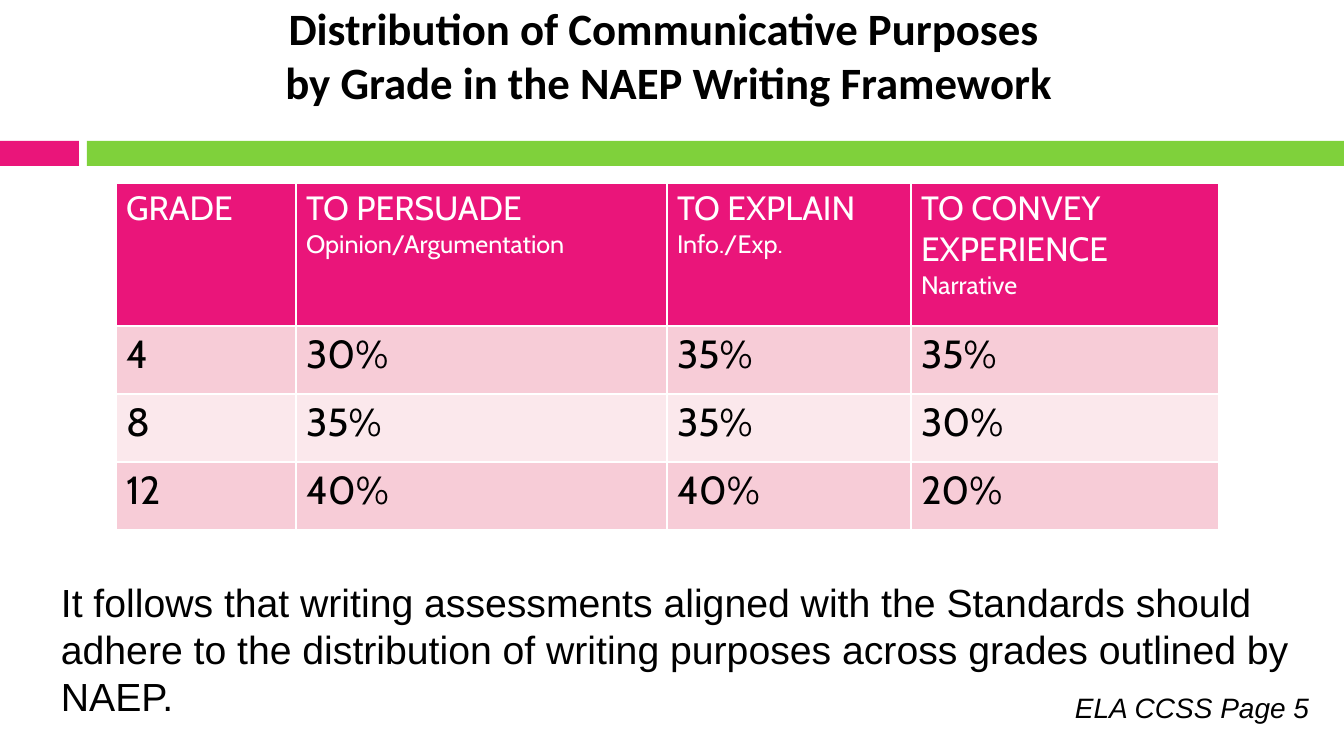
from lxml import etree
from pptx import Presentation, util as u
from pptx.dml.color import RGBColor
from pptx.enum import shapes, text

PINK = RGBColor(0xEA, 0x15, 0x7A)
GREEN = RGBColor(0x7F, 0xD1, 0x3B)
ROSE = RGBColor(0xF7, 0xCC, 0xD7)
PALE = RGBColor(0xFB, 0xE8, 0xEC)
WHITE = RGBColor(0xFF, 0xFF, 0xFF)
BLACK = RGBColor(0, 0, 0)

WIDE, HIGH = 1344, 756
BAR_TOP, BAR_HIGH, SPLIT, GAP = 141, 25, 79, 8

HEADS = [
    ["GRADE"],
    ["TO PERSUADE", "Opinion/Argumentation"],
    ["TO EXPLAIN", "Info./Exp."],
    ["TO CONVEY EXPERIENCE", "Narrative"],
]
GRADES = [
    ("4", "30%", "35%", "35%"),
    ("8", "35%", "35%", "30%"),
    ("12", "40%", "40%", "20%"),
]
COLS = [180, 371, 244, 308]
HEAD_HIGH, ROW_HIGH = 143, 68
TABLE_LEFT, TABLE_TOP = 116, 183

TITLE = ["Distribution of Communicative Purposes \vby Grade in the NAEP Writing Framework"]
BODY = ["It follows that writing assessments aligned with the Standards should adhere to "
        "the distribution of writing purposes across grades outlined by NAEP."]
CITE = ["ELA CCSS Page 5"]

LEFT, CENTER = text.PP_ALIGN.LEFT, text.PP_ALIGN.CENTER
TEXTS = [
    (TITLE, (16, -4, 1306, 120), CENTER, True, dict(name="Calibri", size=32, bold=True)),
    (BODY, (51, 573, 1271, 152), LEFT, True, dict(name="Arial", size=28)),
    (CITE, (1065, 686, 257, 44), LEFT, False, dict(name="Arial", size=20, italic=True)),
]


def px(n):
    return u.Inches(n / 100.8)


def style(font, form, color):
    for key, val in form.items():
        setattr(font, key, u.Pt(val) if key == "size" else val)
    font.color.rgb = color


def write(frame, lines, forms, color, align=LEFT):
    for i, (line, form) in enumerate(zip(lines, forms)):
        para = frame.paragraphs[0] if i == 0 else frame.add_paragraph()
        para.text = line
        para.alignment = align
        for run in para.runs:
            style(run.font, form, color)


def edge(cell):
    prop = cell._tc.get_or_add_tcPr()
    ns = "http://schemas.openxmlformats.org/drawingml/2006/main"
    for i, side in enumerate(("lnL", "lnR", "lnT", "lnB")):
        line = etree.Element(f"{{{ns}}}{side}", w=str(u.Pt(1)))
        fill = etree.SubElement(line, f"{{{ns}}}solidFill")
        etree.SubElement(fill, f"{{{ns}}}srgbClr", val=str(WHITE))
        prop.insert(i, line)


def add_bar(slide, left, wide, color):
    bar = slide.shapes.add_shape(shapes.MSO_SHAPE.RECTANGLE,
                                 *map(px, (left, BAR_TOP, wide, BAR_HIGH)))
    bar.shadow.inherit = False
    bar.fill.solid()
    bar.fill.fore_color.rgb = color
    bar.line.fill.background()


def add_grid(slide):
    rows = [HEADS] + [[[val] for val in row] for row in GRADES]
    high = HEAD_HIGH + ROW_HIGH * len(GRADES)
    grid = slide.shapes.add_table(len(rows), len(COLS), px(TABLE_LEFT), px(TABLE_TOP),
                                  px(sum(COLS)), px(high)).table
    for col, wide in zip(grid.columns, COLS):
        col.width = px(wide)
    for r, row in enumerate(rows):
        head = r == 0
        grid.rows[r].height = px(HEAD_HIGH if head else ROW_HIGH)
        sizes = (24, 18) if head else (28,)
        forms = [dict(name="Cabin", size=size, bold=False) for size in sizes]
        for c, lines in enumerate(row):
            cell = grid.cell(r, c)
            cell.fill.solid()
            cell.fill.fore_color.rgb = PINK if head else ROSE if r % 2 else PALE
            write(cell.text_frame, lines, forms, WHITE if head else BLACK)
            edge(cell)


def main():
    deck = Presentation()
    deck.slide_width, deck.slide_height = px(WIDE), px(HIGH)
    slide = deck.slides.add_slide(deck.slide_layouts[6])
    add_bar(slide, 0, SPLIT, PINK)
    add_bar(slide, SPLIT + GAP, WIDE - SPLIT - GAP, GREEN)
    add_grid(slide)
    for lines, box, align, wrap, form in TEXTS:
        frame = slide.shapes.add_textbox(*map(px, box)).text_frame
        frame.word_wrap = wrap
        write(frame, lines, [form], BLACK, align)
    deck.save("out.pptx")


if __name__ == "__main__":
    main()
